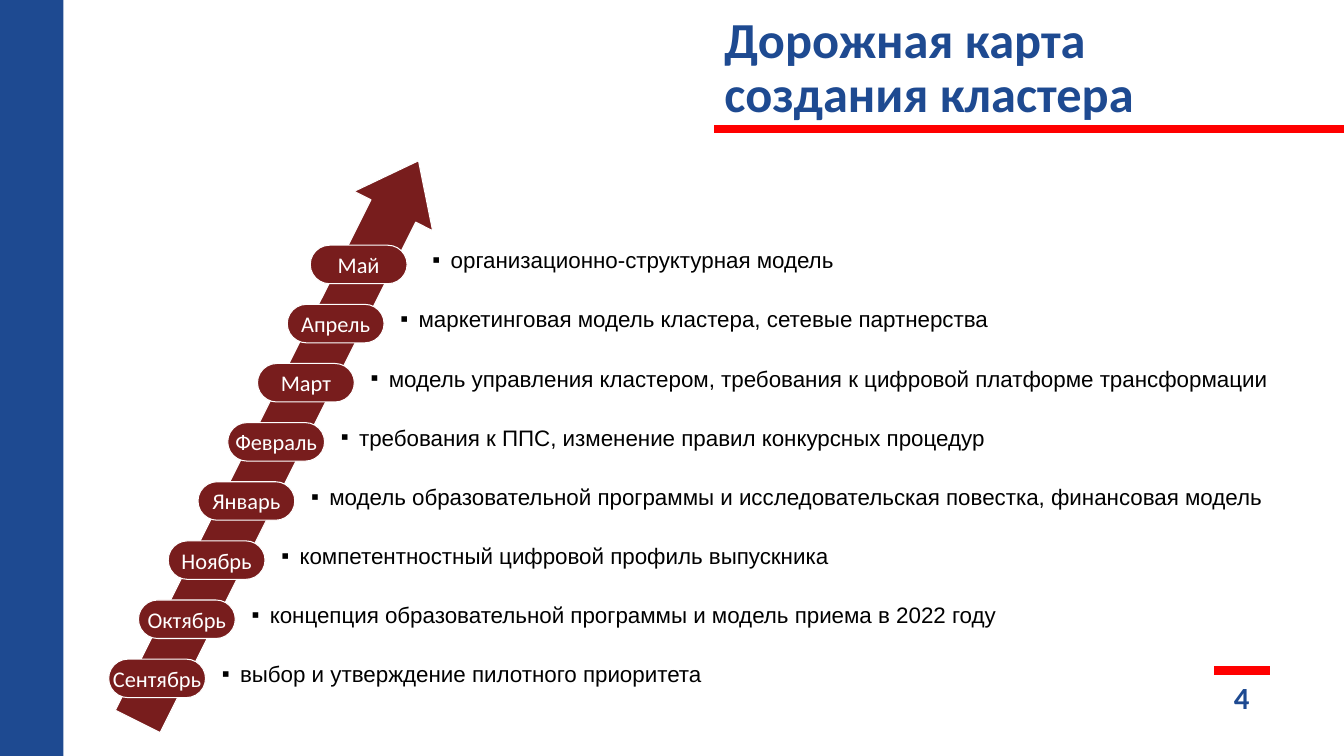
from lxml import etree
from pptx import Presentation
from pptx.dml.color import RGBColor
from pptx.enum.shapes import MSO_CONNECTOR, MSO_SHAPE
from pptx.enum.text import MSO_ANCHOR, MSO_AUTO_SIZE, PP_ALIGN
from pptx.oxml.ns import qn
from pptx.util import Cm, Pt

BLUE, RED, MAROON, WHITE, BLACK = "1E4A91", "FF0000", "781D1D", "FFFFFF", "000000"

# Roadmap from bottom to top: month, task, right edge of the task text (cm)
STAGES = [
    ("Сентябрь", "выбор и утверждение пилотного приоритета", 25.43),
    ("Октябрь", "концепция образовательной программы и модель приема в 2022 году", 25.43),
    ("Ноябрь", "компетентностный цифровой профиль выпускника", 25.43),
    ("Январь", "модель образовательной программы и исследовательская повестка, "
               "финансовая модель", 32.72),
    ("Февраль", "требования к ППС, изменение правил конкурсных процедур", 25.43),
    ("Март", "модель управления кластером, требования к цифровой платформе "
             "трансформации", 33.25),
    ("Апрель", "маркетинговая модель кластера, сетевые партнерства", 25.43),
    ("Май", "организационно-структурная модель", 26.26),
]
FIRST_LEFT, FIRST_TOP = 2.74, 16.61
STEP_RIGHT, STEP_UP = 0.75, 1.49
PILL_WIDTH, PILL_HEIGHT = 2.44, 0.97
TASK_OFFSET = 2.85
MAY_LEFT, MAY_TASK_LEFT = 7.82, 10.9


def color(value):
    return RGBColor.from_string(value)


def add_run(paragraph, text, size, font_name, text_color, bold=False):
    run = paragraph.add_run()
    run.text = text
    run.font.size = Pt(size)
    run.font.name = font_name
    run.font.bold = bold
    run.font.color.rgb = color(text_color)


def clear_margins(frame):
    frame.margin_left = frame.margin_right = frame.margin_top = frame.margin_bottom = 0


def add_block(slide, preset, left, top, width, height, fill, line=None):
    shape = slide.shapes.add_shape(preset, Cm(left), Cm(top), Cm(width), Cm(height))
    shape.shadow.inherit = False
    shape.fill.solid()
    shape.fill.fore_color.rgb = color(fill)
    if line:
        shape.line.color.rgb = color(line)
        shape.line.width = Pt(0.75)
    else:
        shape.line.fill.background()
    return shape


def add_rule(slide, left, right, top):
    connector = slide.shapes.add_connector(
        MSO_CONNECTOR.STRAIGHT, Cm(left), Cm(top), Cm(right), Cm(top))
    connector.line.color.rgb = color(RED)
    connector.line.width = Pt(6)
    etree.SubElement(connector._element.spPr, qn("a:effectLst"))


def add_title(slide, text):
    title = slide.shapes.title
    title.left, title.top, title.width, title.height = Cm(18), Cm(0), Cm(14.73), Cm(3.25)
    frame = title.text_frame
    frame.word_wrap = True
    frame.auto_size = MSO_AUTO_SIZE.NONE
    frame.vertical_anchor = MSO_ANCHOR.BOTTOM
    paragraph = frame.paragraphs[0]
    paragraph.alignment = PP_ALIGN.LEFT
    paragraph.line_spacing = 0.9
    add_run(paragraph, text, 36, "Calibri", BLUE, bold=True)


def add_page_number(slide, number):
    box = slide.shapes.add_textbox(Cm(30.4), Cm(17.07), Cm(1.78), Cm(0.99))
    frame = box.text_frame
    frame.word_wrap = True
    frame.vertical_anchor = MSO_ANCHOR.MIDDLE
    paragraph = frame.paragraphs[0]
    paragraph.alignment = PP_ALIGN.CENTER
    add_run(paragraph, number, 22, "Calibri", BLUE, bold=True)


def add_arrow(slide):
    arrow = add_block(slide, MSO_SHAPE.RIGHT_ARROW, -0.89, 10.01, 15.8, 2.21, MAROON, WHITE)
    arrow.rotation = 296.6
    arrow.adjustments[0] = 0.57
    arrow.adjustments[1] = 0.64


def add_month(slide, month, left, top):
    pill = add_block(slide, MSO_SHAPE.ROUNDED_RECTANGLE, left, top,
                     PILL_WIDTH, PILL_HEIGHT, MAROON, WHITE)
    pill.adjustments[0] = 0.5
    frame = pill.text_frame
    clear_margins(frame)
    frame.word_wrap = False
    frame.vertical_anchor = MSO_ANCHOR.MIDDLE
    paragraph = frame.paragraphs[0]
    paragraph.alignment = PP_ALIGN.CENTER
    add_run(paragraph, month, 16, "Calibri", WHITE)


def add_task(slide, task, left, top, right):
    box = slide.shapes.add_textbox(Cm(left), Cm(top), Cm(right - left), Cm(0.69))
    frame = box.text_frame
    clear_margins(frame)
    frame.word_wrap = True
    frame.auto_size = MSO_AUTO_SIZE.SHAPE_TO_FIT_TEXT
    paragraph = frame.paragraphs[0]
    properties = paragraph._p.get_or_add_pPr()
    properties.set("marL", str(Cm(0.46)))
    properties.set("indent", str(-Cm(0.46)))
    etree.SubElement(properties, qn("a:buFont"), typeface="Arial")
    etree.SubElement(properties, qn("a:buChar"), char="▪")
    add_run(paragraph, task, 16, "Arial", BLACK)


def main():
    presentation = Presentation()
    presentation.slide_width, presentation.slide_height = Cm(33.87), Cm(19.05)
    slide = presentation.slides.add_slide(presentation.slide_layouts[5])

    # Frame of the slide
    add_rule(slide, 18, 33.87, 3.25)
    add_rule(slide, 30.6, 32, 16.9)
    add_block(slide, MSO_SHAPE.RECTANGLE, 0, 0, 1.6, 19.1, BLUE)
    add_title(slide, "Дорожная карта создания кластера")
    add_page_number(slide, "4")

    # Rising arrow with one step per month
    add_arrow(slide)
    for index, (month, task, right) in enumerate(STAGES):
        left = FIRST_LEFT + index * STEP_RIGHT
        top = FIRST_TOP - index * STEP_UP
        task_left = left + TASK_OFFSET
        if month == "Май":
            left, task_left = MAY_LEFT, MAY_TASK_LEFT
        add_month(slide, month, left, top)
        add_task(slide, task, task_left, top + 0.03, right)

    presentation.save("out.pptx")


if __name__ == "__main__":
    main()
